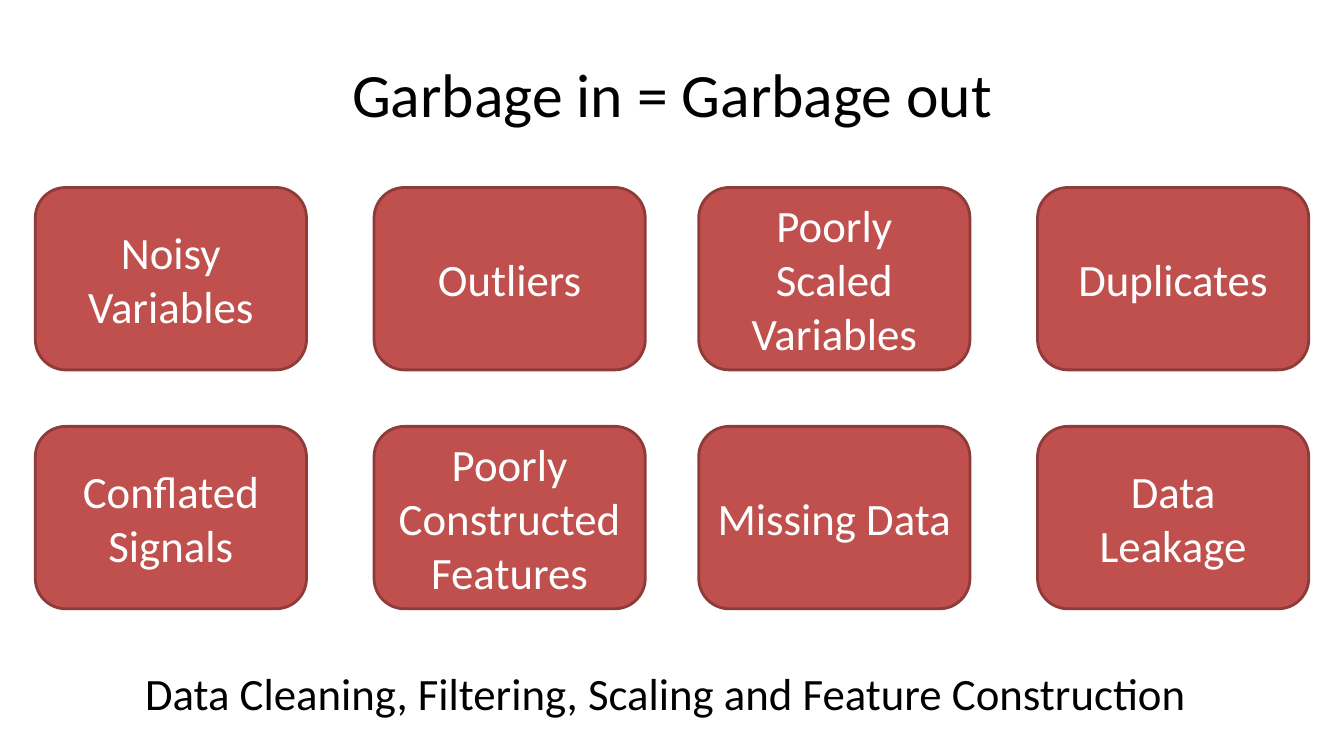
from dataclasses import dataclass

import pptx
import pptx.dml.color
import pptx.enum.shapes
import pptx.enum.text
import pptx.util

Inches = pptx.util.Inches
RGBColor = pptx.dml.color.RGBColor
Align = pptx.enum.text.PP_ALIGN
Anchor = pptx.enum.text.MSO_ANCHOR


@dataclass(frozen=True)
class Theme:
    font: str = "Calibri"
    ink: str = "000000"
    card_fill: str = "C0504D"
    card_line: str = "8E3B39"
    card_ink: str = "FFFFFF"
    title_size: int = 44
    body_size: int = 32
    line_width: int = 2


THEME = Theme()

SLIDE_WIDTH, SLIDE_HEIGHT = 13.33, 7.5
CARD_WIDTH, CARD_HEIGHT = 2.69, 1.81
GRID_LEFT, GRID_TOP = 0.35, 1.86
COLUMN_PITCH, PAIR_PITCH, ROW_PITCH = 3.36, 6.58, 2.37

PROBLEMS = [
    ["Noisy Variables", "Outliers", "Poorly Scaled Variables", "Duplicates"],
    ["Conflated Signals", "Poorly Constructed Features", "Missing Data", "Data Leakage"],
]


def write(frame, wording, size, color, align):
    paragraph = frame.paragraphs[0]
    paragraph.text = wording
    paragraph.alignment = align
    paragraph.font.name = THEME.font
    paragraph.font.size = pptx.util.Pt(size)
    paragraph.font.color.rgb = RGBColor.from_string(color)


def add_title(slide, wording):
    title = slide.shapes.add_textbox(
        Inches(0.67), Inches(0.3), Inches(12), Inches(1.25))
    title.text_frame.word_wrap = True
    title.text_frame.vertical_anchor = Anchor.MIDDLE
    write(title.text_frame, wording, THEME.title_size, THEME.ink, Align.CENTER)


def add_remedies(slide, wording):
    remedies = slide.shapes.add_textbox(
        Inches(1.34), Inches(6.56), Inches(10.65), Inches(0.64))
    remedies.text_frame.word_wrap = False
    remedies.text_frame.auto_size = pptx.enum.text.MSO_AUTO_SIZE.SHAPE_TO_FIT_TEXT
    write(remedies.text_frame, wording, THEME.body_size, THEME.ink, Align.LEFT)


def add_problem(slide, wording, column, row):
    """Place a card; the columns stand in two pairs, slightly closer between pairs."""
    pair, place = divmod(column, 2)
    card = slide.shapes.add_shape(
        pptx.enum.shapes.MSO_SHAPE.ROUNDED_RECTANGLE,
        Inches(GRID_LEFT + pair * PAIR_PITCH + place * COLUMN_PITCH),
        Inches(GRID_TOP + row * ROW_PITCH),
        Inches(CARD_WIDTH), Inches(CARD_HEIGHT))
    card.shadow.inherit = False
    card.fill.solid()
    card.fill.fore_color.rgb = RGBColor.from_string(THEME.card_fill)
    card.line.color.rgb = RGBColor.from_string(THEME.card_line)
    card.line.width = pptx.util.Pt(THEME.line_width)
    card.text_frame.word_wrap = True
    card.text_frame.vertical_anchor = Anchor.MIDDLE
    write(card.text_frame, wording, THEME.body_size, THEME.card_ink, Align.CENTER)


def main():
    deck = pptx.Presentation()
    deck.slide_width = Inches(SLIDE_WIDTH)
    deck.slide_height = Inches(SLIDE_HEIGHT)
    slide = deck.slides.add_slide(deck.slide_layouts[6])

    add_title(slide, "Garbage in = Garbage out")
    for row, problems in enumerate(PROBLEMS):
        for column, problem in enumerate(problems):
            add_problem(slide, problem, column, row)
    add_remedies(slide, "Data Cleaning, Filtering, Scaling and Feature Construction")

    deck.save("out.pptx")


if __name__ == "__main__":
    main()
